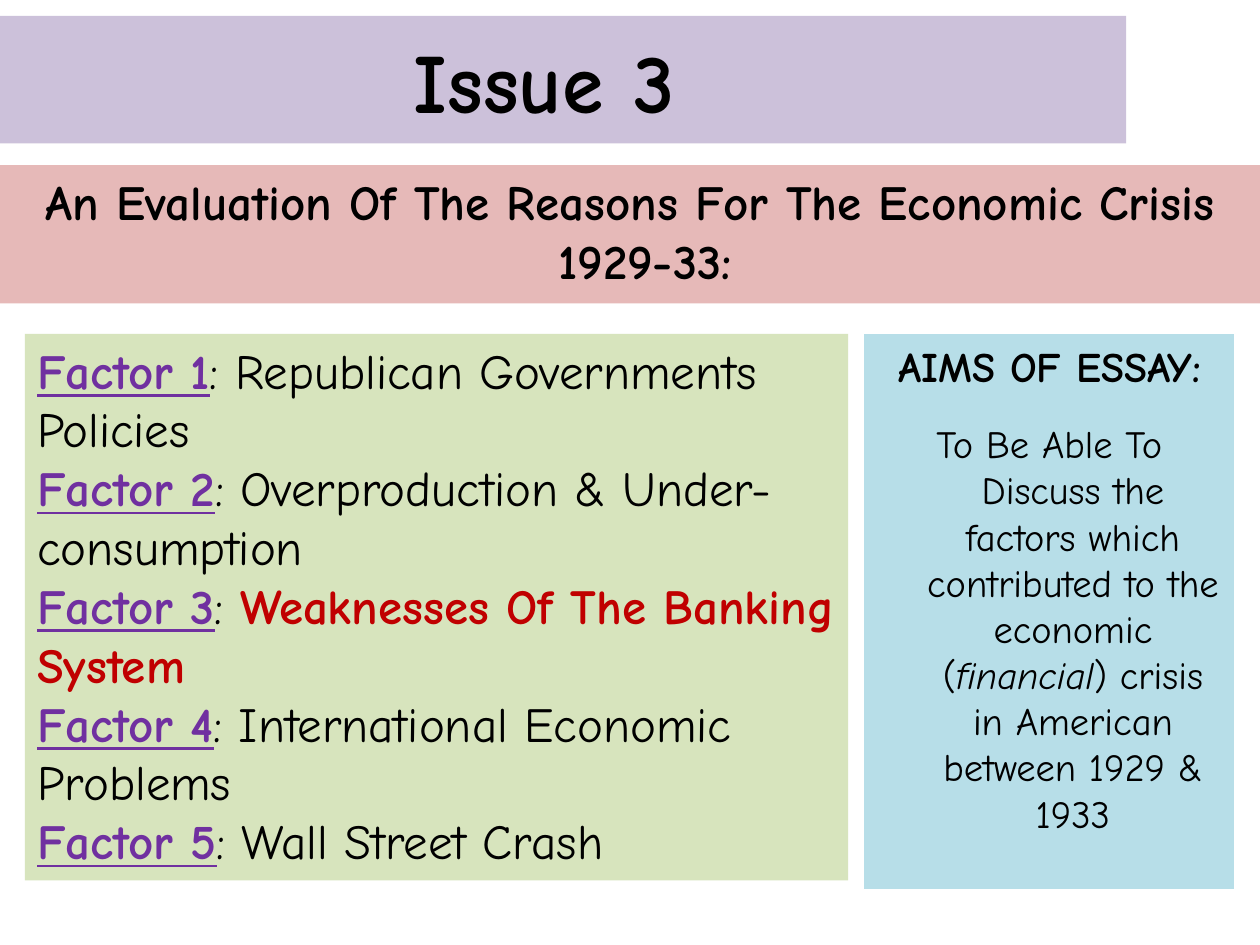
from pptx import Presentation
from pptx.dml.color import RGBColor
from pptx.enum.text import MSO_ANCHOR, MSO_AUTO_SIZE, PP_ALIGN
from pptx.util import Cm, Pt

COLORS = {
    "title": "CCC1DA", "question": "E6B9B8", "factors": "D7E4BD", "aims": "B7DEE8",
    "text": "000000", "label": "7030A0", "focus": "C00000", "border": "FFFFFF",
}
FACTORS = [
    ("Republican Governments Policies", False),
    ("Overproduction & Under-consumption", False),
    ("Weaknesses Of The Banking System", True),
    ("International Economic Problems", False),
    ("Wall Street Crash", False),
]


def color(name):
    return RGBColor.from_string(COLORS[name])


def add_span(para, text, font="Comic Neue", size=28, fill="text",
             bold=False, italic=False, underline=False):
    span = para.add_run()
    span.text = text
    span.font.name = font
    span.font.size = Pt(size)
    span.font.color.rgb = color(fill)
    span.font.bold = bold
    span.font.italic = italic
    span.font.underline = underline


class SlideBuilder:
    def __init__(self, deck):
        self.page = deck.slides.add_slide(deck.slide_layouts[5])

    def style(self, box, fill):
        box.fill.solid()
        box.fill.fore_color.rgb = color(fill)
        frame = box.text_frame
        frame.word_wrap = True
        frame.auto_size = MSO_AUTO_SIZE.NONE
        return frame

    def title(self, left, top, width, height, fill):
        box = self.page.shapes.title
        box.left, box.top, box.width, box.height = left, top, width, height
        frame = self.style(box, fill)
        frame.vertical_anchor = MSO_ANCHOR.MIDDLE
        return frame

    def panel(self, left, top, width, height, fill, border=None):
        box = self.page.shapes.add_textbox(left, top, width, height)
        if border:
            box.line.color.rgb = color(border)
            box.line.width = Pt(0.75)
        return self.style(box, fill)

    def para(self, frame, first=False, align=PP_ALIGN.LEFT, hanging=None, before=0):
        para = frame.paragraphs[0] if first else frame.add_paragraph()
        para.alignment = align
        para.space_before = Pt(before)
        if hanging:
            properties = para._p.get_or_add_pPr()
            properties.set("marL", str(hanging))
            properties.set("indent", str(-hanging))
        return para


def main():
    deck = Presentation()
    deck.slide_width, deck.slide_height = Cm(25.4), Cm(19.05)
    builder = SlideBuilder(deck)
    center, hanging = PP_ALIGN.CENTER, Cm(0.95)

    # Title band
    frame = builder.title(Cm(-0.16), Cm(0.32), Cm(22.86), Cm(2.57), "title")
    add_span(builder.para(frame, first=True, align=center), "Issue 3 ", size=48, bold=True)

    # Essay question
    frame = builder.panel(Cm(0), Cm(3.33), Cm(25.4), Cm(2.79), "question")
    para = builder.para(frame, first=True, align=center, hanging=hanging)
    add_span(para, "An Evaluation Of The Reasons For The Economic Crisis 1929-33: ", bold=True)

    # Factors, with the current one in focus
    frame = builder.panel(Cm(0.5), Cm(6.73), Cm(16.6), Cm(11.02), "factors")
    for number, (factor, focus) in enumerate(FACTORS, start=1):
        para = builder.para(frame, first=number == 1)
        add_span(para, f"Factor {number}", fill="label", bold=True, underline=True)
        add_span(para, ": ")
        add_span(para, factor, fill="focus" if focus else "text", bold=focus)

    # Aims of the essay
    frame = builder.panel(Cm(17.41), Cm(6.73), Cm(7.49), Cm(11.2), "aims", border="border")
    para = builder.para(frame, first=True, align=center)
    add_span(para, "AIMS OF ESSAY:", size=24, bold=True)
    para = builder.para(frame, align=center, hanging=hanging, before=17)
    add_span(para, "To Be Able To Discuss the factors which contributed to the economic (", size=22)
    add_span(para, "financial", size=22, italic=True)
    add_span(para, ") crisis in American between 1929 & 1933", size=22)

    deck.save("out.pptx")


if __name__ == "__main__":
    main()
